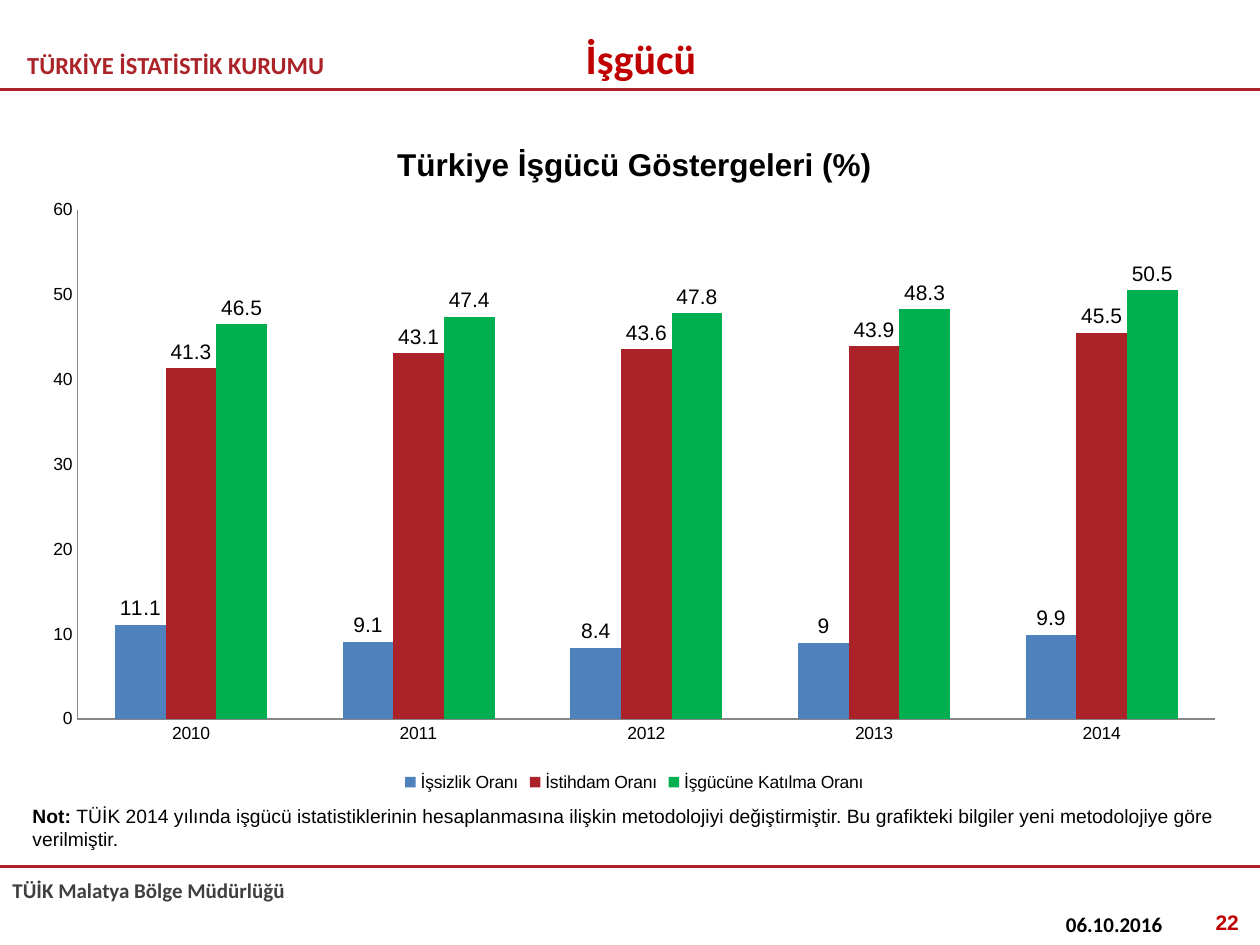
from lxml import etree
from pptx import Presentation
from pptx.chart.data import CategoryChartData
from pptx.dml.color import RGBColor
from pptx.enum.chart import XL_CHART_TYPE, XL_LABEL_POSITION, XL_LEGEND_POSITION, XL_TICK_MARK
from pptx.enum.shapes import MSO_CONNECTOR
from pptx.enum.text import MSO_ANCHOR, PP_ALIGN
from pptx.oxml import parse_xml
from pptx.oxml.ns import nsdecls, qn
from pptx.util import Pt

COLUMNS = XL_CHART_TYPE.COLUMN_CLUSTERED
OUTSIDE_END = XL_LABEL_POSITION.OUTSIDE_END
LEGEND_BOTTOM = XL_LEGEND_POSITION.BOTTOM
NO_TICK = XL_TICK_MARK.NONE
STRAIGHT = MSO_CONNECTOR.STRAIGHT
TOP, MIDDLE = MSO_ANCHOR.TOP, MSO_ANCHOR.MIDDLE
LEFT, CENTER, RIGHT = PP_ALIGN.LEFT, PP_ALIGN.CENTER, PP_ALIGN.RIGHT

WIDTH, HEIGHT = 720, 540
COLORS = {
    "black": "000000",
    "grey": "404040",
    "axis": "868686",
    "brand": "AB2328",
    "red": "C00000",
    "blue": "4F81BD",
    "green": "00B050",
}


def rgb(name):
    return RGBColor.from_string(COLORS[name])


class SlideBuilder:
    def __init__(self, slide, heading_font="Calibri", body_font="Arial"):
        self.slide = slide
        self.heading_font = heading_font
        self.body_font = body_font

    def set_font(self, font, size, color="black", bold=None, name=None):
        font.name = name or self.body_font
        font.size = Pt(size)
        font.bold = bold
        font.color.rgb = rgb(color)

    def text(self, box, runs, size, color="black", bold=True, name=None, align=LEFT, anchor=TOP):
        """Add a one-paragraph text box; runs is a list of (text, bold or None)."""
        frame = self.slide.shapes.add_textbox(*map(Pt, box)).text_frame
        frame.word_wrap = True
        frame.vertical_anchor = anchor
        paragraph = frame.paragraphs[0]
        paragraph.alignment = align
        self.set_font(paragraph.font, size, color, bold, name)
        for text, run_bold in runs:
            run = paragraph.add_run()
            run.text = text
            run.font.bold = run_bold

    def heading(self, box, text, size, color, **options):
        self.text(box, [(text, None)], size, color, name=self.heading_font, **options)

    def rule(self, top):
        line = self.slide.shapes.add_connector(STRAIGHT, Pt(0), Pt(top), Pt(WIDTH), Pt(top))
        line.line.color.rgb = rgb("brand")
        line.line.width = Pt(1.5)
        etree.SubElement(line._element.spPr, qn("a:effectLst"))

    def column_chart(self, box, title, categories, series, plot_area):
        data = CategoryChartData()
        data.categories = categories
        for name, values, _ in series:
            data.add_series(name, values)
        chart = self.slide.shapes.add_chart(COLUMNS, *map(Pt, box), data).chart
        self.set_font(chart.font, 10)

        # Title and legend
        chart.has_title = True
        chart.chart_title.include_in_layout = False
        paragraph = chart.chart_title.text_frame.paragraphs[0]
        paragraph.text = title
        self.set_font(paragraph.font, 18, bold=True)
        chart.has_legend = True
        chart.legend.position = LEGEND_BOTTOM
        chart.legend.include_in_layout = False

        # Axes
        for axis in (chart.category_axis, chart.value_axis):
            axis.has_major_gridlines = False
            axis.major_tick_mark = axis.minor_tick_mark = NO_TICK
            axis.format.line.color.rgb = rgb("axis")
            axis.format.line.width = Pt(0.75)
        chart.value_axis.minimum_scale = 0
        chart.value_axis.maximum_scale = 60
        chart.value_axis.major_unit = 10

        # Columns and their labels
        plot = chart.plots[0]
        plot.gap_width = 150
        plot.overlap = 0
        plot.vary_by_categories = False
        for column, (_, _, color) in zip(plot.series, series):
            column.format.fill.solid()
            column.format.fill.fore_color.rgb = rgb(color)
            column.invert_if_negative = False
            labels = column.data_labels
            labels.show_value = True
            labels.position = OUTSIDE_END
            self.set_font(labels.font, 12)

        self.place_plot(chart, plot_area)

    def place_plot(self, chart, plot_area):
        """Fix the inner plot area, given as fractions of the chart."""
        sizes = "".join(f'<c:{key} val="{value}"/>' for key, value in zip("xywh", plot_area))
        layout = parse_xml(
            f'<c:layout {nsdecls("c")}><c:manualLayout><c:layoutTarget val="inner"/>'
            f'<c:xMode val="edge"/><c:yMode val="edge"/>{sizes}</c:manualLayout></c:layout>'
        )
        area = chart._chartSpace.chart.plotArea
        for old_layout in area.findall(qn("c:layout")):
            area.remove(old_layout)
        area.insert(0, layout)


def main():
    presentation = Presentation()
    presentation.slide_width, presentation.slide_height = Pt(WIDTH), Pt(HEIGHT)
    slide = presentation.slides.add_slide(presentation.slide_layouts[6])
    builder = SlideBuilder(slide)

    # Header and footer
    builder.heading((8.5, 23, 255, 28), "TÜRKİYE İSTATİSTİK KURUMU", 14, "brand", anchor=MIDDLE)
    builder.heading((0, 498, 309, 22), "TÜİK Malatya Bölge Müdürlüğü", 12, "grey")
    for top in (51, 495):
        builder.rule(top)
    builder.heading((602, 517.5, 110, 22), "06.10.2016", 12, "black")
    builder.text((547, 516, 168, 22), [("22", None)], 12, "red", align=RIGHT)

    # Slide title
    builder.heading((297.5, 15, 137.5, 36), "İşgücü", 24, "red", align=CENTER, anchor=MIDDLE)

    # Labour force chart
    builder.column_chart(
        (16.5, 67.5, 692, 388),
        "Türkiye İşgücü Göstergeleri (%)",
        ["2010", "2011", "2012", "2013", "2014"],
        [
            ("İşsizlik Oranı", (11.1, 9.1, 8.4, 9, 9.9), "blue"),
            ("İstihdam Oranı", (41.3, 43.1, 43.6, 43.9, 45.5), "brand"),
            ("İşgücüne Katılma Oranı", (46.5, 47.4, 47.8, 48.3, 50.5), "green"),
        ],
        plot_area=(0.04, 0.135, 0.94, 0.75),
    )

    # Note under the chart
    note = (
        "TÜİK 2014 yılında işgücü istatistiklerinin hesaplanmasına ilişkin metodolojiyi "
        "değiştirmiştir. Bu grafikteki bilgiler yeni metodolojiye göre verilmiştir."
    )
    builder.text((11.5, 456, 708.5, 34), [("Not: ", True), (note, None)], 11, bold=False)

    presentation.save("out.pptx")


if __name__ == "__main__":
    main()
